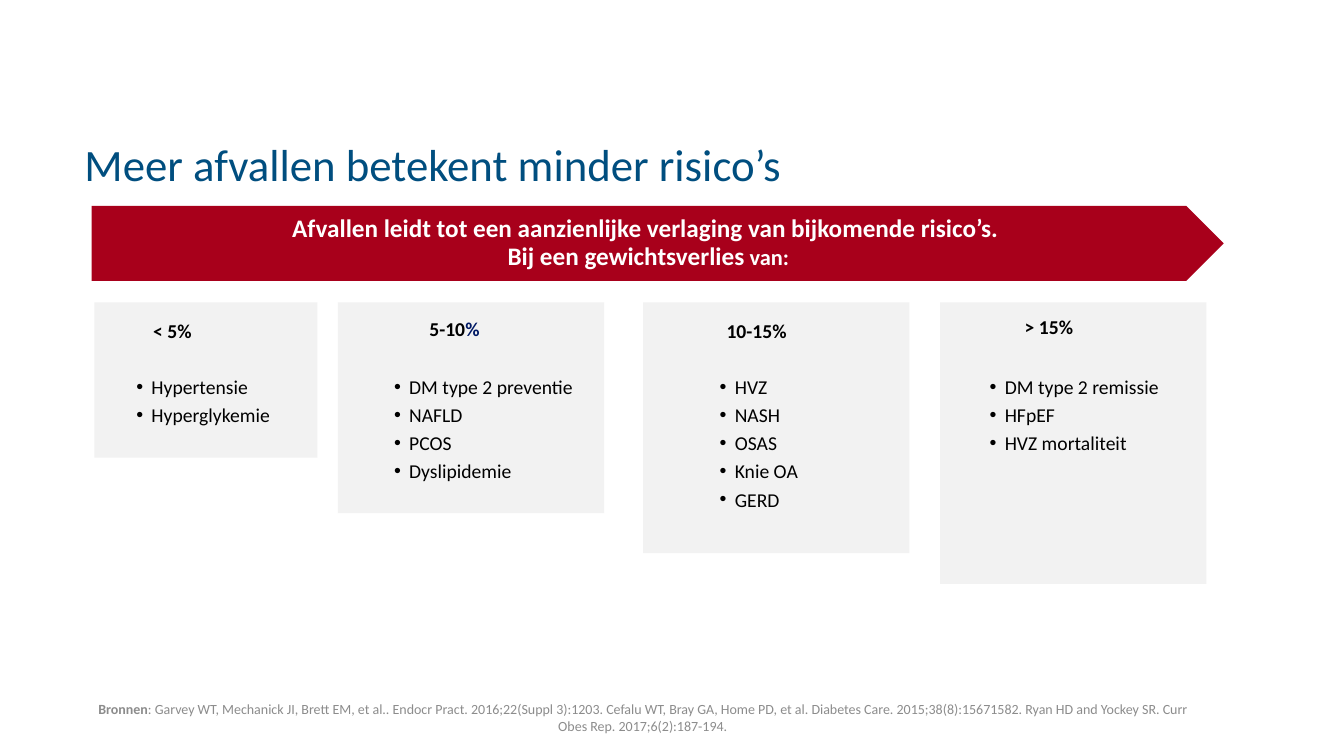
import dataclasses

import lxml.etree
import pptx
import pptx.dml.color
import pptx.enum.shapes
import pptx.enum.text
import pptx.oxml.ns
import pptx.util

Pt = pptx.util.Pt
ALIGN = pptx.enum.text.PP_ALIGN
ANCHOR = pptx.enum.text.MSO_ANCHOR
SHAPE = pptx.enum.shapes.MSO_SHAPE

COLORS = {
    "title": "004E7F",
    "source": "8C8C8C",
    "panel": "F2F2F2",
    "text": "000000",
    "percent": "001965",
    "banner": "A8001B",
    "white": "FFFFFF",
}
FONT = "Calibri"
PANEL_TOP = 216
LIST_TOP = 264.2
HEADING_HEIGHT = 18.7
BULLET_INDENT = 10.8


@dataclasses.dataclass
class Run:
    text: str
    size: float
    color: str
    bold: bool = False


@dataclasses.dataclass
class Area:
    left: float
    top: float
    width: float
    height: float

    def lengths(self) -> list:
        return [Pt(value) for value in dataclasses.astuple(self)]


@dataclasses.dataclass
class Panel:
    area: Area
    heading: Area
    heading_runs: list[Run]
    effects_area: Area
    effects: list[str]


def heading_run(text: str, color: str = "text") -> Run:
    return Run(text, 14, color, True)


def make_panel(left: float, width: float, height: float,
               heading: tuple[float, float, float], heading_runs: list[Run],
               effects: tuple[float, float, float], names: list[str]) -> Panel:
    return Panel(
        Area(left, PANEL_TOP, width, height),
        Area(*heading, HEADING_HEIGHT), heading_runs,
        Area(effects[0], LIST_TOP, effects[1], effects[2]), names)


PANELS = [
    make_panel(67.5, 159.3, 110.9, (109.4, 224.6, 32.4), [heading_run("< 5%")],
               (97.4, 96.5, 39.6), ["Hypertensie", "Hyperglykemie"]),
    make_panel(241.4, 190.1, 150.5, (306.7, 222.8, 41),
               [heading_run("5-10"), heading_run("%", "percent")],
               (281.5, 136.8, 79.2),
               ["DM type 2 preventie", "NAFLD", "PCOS", "Dyslipidemie"]),
    make_panel(459.4, 190.1, 179, (519, 224.6, 48.2), [heading_run("10-15%")],
               (514.1, 56.2, 100.1), ["HVZ", "NASH", "OSAS", "Knie OA", "GERD"]),
    make_panel(671.6, 190.1, 201.1, (732, 221.8, 40.3), [heading_run("> 15%")],
               (706.9, 121.7, 79.9),
               ["DM type 2 remissie", "HFpEF", "HVZ mortaliteit"]),
]


def rgb(name: str) -> pptx.dml.color.RGBColor:
    return pptx.dml.color.RGBColor.from_string(COLORS[name])


def add_bullet(para) -> None:
    properties = para._p.get_or_add_pPr()
    properties.set("marL", str(Pt(BULLET_INDENT)))
    properties.set("indent", str(-Pt(BULLET_INDENT)))
    for tag, attribute, value in (("a:buFont", "typeface", "Arial"),
                                  ("a:buChar", "char", "•")):
        element = lxml.etree.SubElement(properties, pptx.oxml.ns.qn(tag))
        element.set(attribute, value)


def fill_text(frame, paragraphs: list[list[Run]], align=ALIGN.LEFT,
              spacing: float = 1.0, bullets: bool = False) -> None:
    for index, runs in enumerate(paragraphs):
        para = frame.paragraphs[0] if index == 0 else frame.add_paragraph()
        para.alignment = align
        para.line_spacing = spacing
        if bullets:
            add_bullet(para)
        for run in runs:
            span = para.add_run()
            span.text = run.text
            span.font.name = FONT
            span.font.size = Pt(run.size)
            span.font.bold = run.bold
            span.font.color.rgb = rgb(run.color)


def add_shape(slide, kind, area: Area, color: str):
    shape = slide.shapes.add_shape(kind, *area.lengths())
    shape.shadow.inherit = False
    shape.fill.solid()
    shape.fill.fore_color.rgb = rgb(color)
    shape.line.fill.background()
    return shape


def add_frame(slide, area: Area):
    frame = slide.shapes.add_textbox(*area.lengths()).text_frame
    frame.word_wrap = True
    frame.vertical_anchor = ANCHOR.TOP
    return frame


def add_label(slide, area: Area, paragraphs: list[list[Run]], bullets: bool) -> None:
    frame = add_shape(slide, SHAPE.RECTANGLE, area, "panel").text_frame
    frame.word_wrap = False
    frame.auto_size = pptx.enum.text.MSO_AUTO_SIZE.SHAPE_TO_FIT_TEXT
    frame.vertical_anchor = ANCHOR.TOP
    frame.margin_left = frame.margin_right = 0
    frame.margin_top = frame.margin_bottom = 0
    fill_text(frame, paragraphs, spacing=1.2, bullets=bullets)


def add_panel(slide, panel: Panel) -> None:
    base = add_shape(slide, SHAPE.ROUNDED_RECTANGLE, panel.area, "panel")
    base.adjustments[0] = 0
    add_label(slide, panel.heading, [panel.heading_runs], False)
    effects = [[Run(name, 14, "text")] for name in panel.effects]
    add_label(slide, panel.effects_area, effects, True)


def main() -> None:
    deck = pptx.Presentation()
    deck.slide_width, deck.slide_height = Pt(960), Pt(540)
    page = deck.slides.add_slide(deck.slide_layouts[6])

    title = add_frame(page, Area(53.3, 86.4, 847.4, 104.4))
    title.margin_top = Pt(15.5)
    fill_text(title, [[Run("Meer afvallen betekent minder risico’s", 32, "title")]],
              spacing=0.9)

    sources = add_frame(page, Area(56.2, 500.6, 805.7, 31.7))
    sources.margin_top = 0
    fill_text(sources, [[
        Run("Bronnen", 10, "source", True),
        Run(": Garvey WT, Mechanick JI, Brett EM, et al.. Endocr Pract. "
            "2016;22(Suppl 3):1203. Cefalu WT, Bray GA, Home PD, et al. "
            "Diabetes Care. 2015;38(8):15671582. Ryan HD and Yockey SR. "
            "Curr Obes Rep. 2017;6(2):187-194.", 10, "source"),
    ]], ALIGN.CENTER)

    for panel in PANELS:
        add_panel(page, panel)

    banner = add_shape(page, SHAPE.PENTAGON, Area(65.5, 147.1, 808.6, 53.5), "banner")
    banner.text_frame.word_wrap = True
    banner.text_frame.vertical_anchor = ANCHOR.MIDDLE
    fill_text(banner.text_frame, [
        [Run("Afvallen leidt tot een aanzienlijke verlaging van bijkomende risico’s. ",
             18, "white", True)],
        [Run("Bij een gewichtsverlies", 18, "white", True),
         Run(" van:", 16, "white", True)],
    ], ALIGN.CENTER, 0.9)

    deck.save("out.pptx")


if __name__ == "__main__":
    main()
